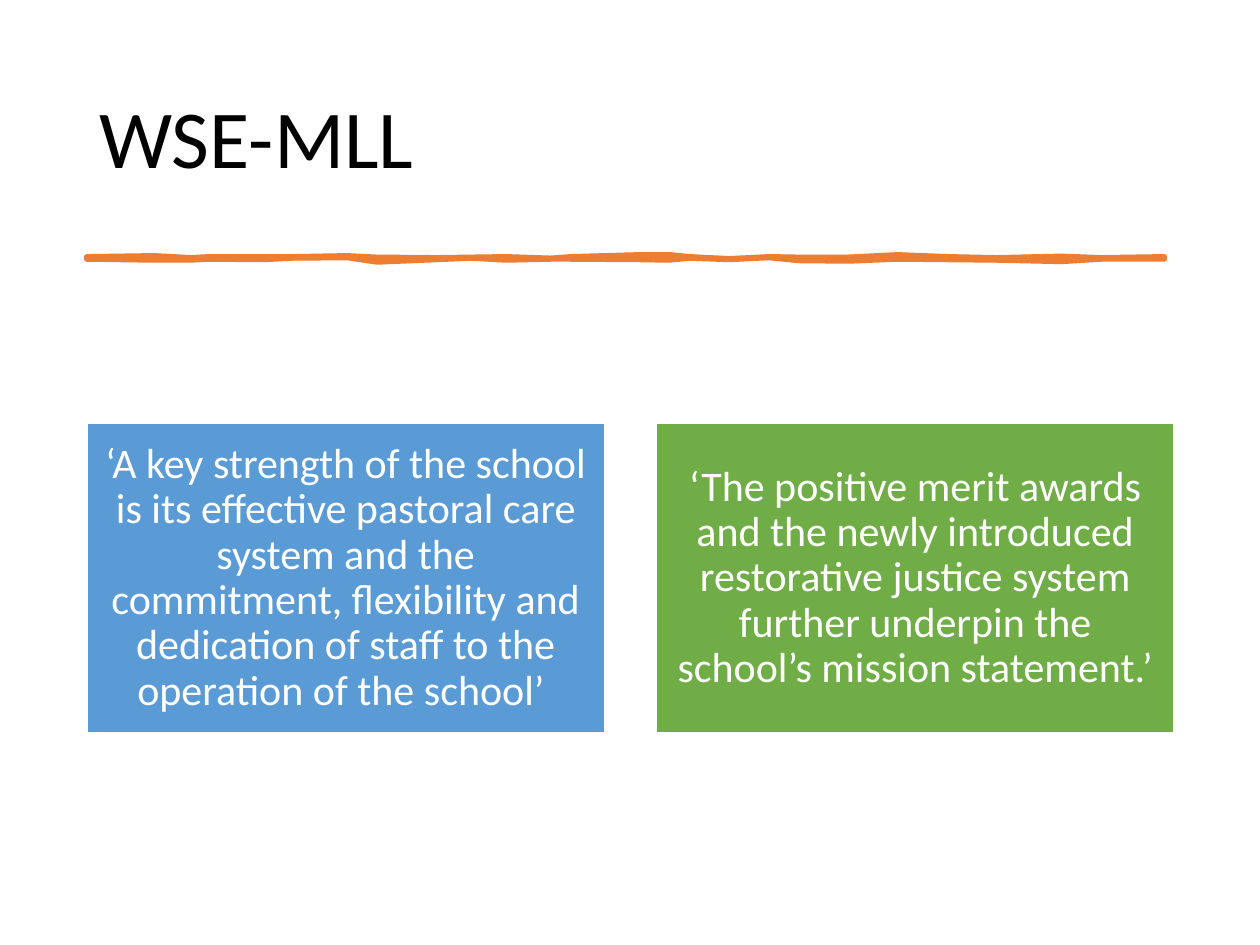
from lxml.etree import SubElement
from pptx import Presentation
from pptx.dml.color import RGBColor
from pptx.enum.shapes import MSO_SHAPE
from pptx.enum.text import MSO_ANCHOR, PP_ALIGN
from pptx.oxml.ns import qn
from pptx.util import Cm, Pt

FONT = "Calibri"
MARGIN = 1.75
CARD_WIDTH, CARD_HEIGHT = 10.44, 6.25
CARD_TOP, CARD_STEP = 8.53, 11.48

CARDS = [
    ("5B9BD5", "‘A key strength of the school is its effective pastoral care "
               "system and the commitment, flexibility and dedication of "
               "staff to the operation of the school’ "),
    ("70AD47", "‘The positive merit awards and the newly introduced "
               "restorative justice system further underpin the school’s "
               "mission statement.’"),
]

# Brush stroke stations: x, upper edge, lower edge
BRUSH = [
    (1.75, 5.18, 5.22), (3.1, 5.16, 5.24), (3.85, 5.2, 5.24),
    (4.2, 5.18, 5.22), (5.3, 5.18, 5.23), (5.9, 5.18, 5.2),
    (7.0, 5.16, 5.19), (7.6, 5.19, 5.28), (8.8, 5.2, 5.23),
    (9.5, 5.19, 5.2), (10.2, 5.18, 5.24), (11.1, 5.21, 5.22),
    (11.5, 5.18, 5.22), (12.9, 5.14, 5.23), (13.5, 5.14, 5.24),
    (13.9, 5.18, 5.2), (14.7, 5.22, 5.23), (15.5, 5.18, 5.19),
    (16.1, 5.19, 5.25), (17.1, 5.19, 5.26), (18.1, 5.14, 5.22),
    (19.1, 5.18, 5.23), (20.1, 5.2, 5.24), (21.4, 5.17, 5.27),
    (22.2, 5.2, 5.22), (23.47, 5.18, 5.22),
]


def color(value):
    return RGBColor.from_string(value)


def set_values(target, values):
    for name, value in values.items():
        setattr(target, name, value)


def paint(shape, fill, line, width):
    shape.shadow.inherit = False
    shape.fill.solid()
    shape.fill.fore_color.rgb = color(fill)
    shape.line.color.rgb = color(line)
    shape.line.width = Pt(width)


def write(shape, text, size, text_color, paragraph_format, margin=None):
    frame = shape.text_frame
    set_values(frame, {"word_wrap": True,
                       "vertical_anchor": MSO_ANCHOR.MIDDLE})
    if margin is not None:
        for side in ("left", "right", "top", "bottom"):
            setattr(frame, f"margin_{side}", Cm(margin))
    paragraph = frame.paragraphs[0]
    set_values(paragraph, {"line_spacing": 0.9, **paragraph_format})
    run = paragraph.add_run()
    run.text = text
    set_values(run.font, {"name": FONT, "size": Pt(size)})
    run.font.color.rgb = color(text_color)


def add_title(slide, text):
    box = slide.shapes.add_textbox(Cm(MARGIN), Cm(1.02), Cm(21.9), Cm(3.68))
    write(box, text, 47, "000000", {"alignment": PP_ALIGN.LEFT})


def add_brush_stroke(slide, stroke_color):
    upper = [(Cm(x), Cm(top)) for x, top, _ in BRUSH]
    lower = [(Cm(x), Cm(bottom)) for x, _, bottom in reversed(BRUSH)]
    builder = slide.shapes.build_freeform(*upper[0])
    builder.add_line_segments(upper[1:] + lower, close=True)
    stroke = builder.convert_to_shape()
    paint(stroke, stroke_color, stroke_color, 3.25)
    SubElement(stroke.line._get_or_add_ln(), qn("a:round"))


def add_card(slide, left, fill, text):
    card = slide.shapes.add_shape(MSO_SHAPE.RECTANGLE, Cm(left), Cm(CARD_TOP),
                                  Cm(CARD_WIDTH), Cm(CARD_HEIGHT))
    paint(card, fill, "FFFFFF", 1)
    write(card, text, 24, "FFFFFF", {"alignment": PP_ALIGN.CENTER}, 0.25)


def main():
    presentation = Presentation()
    set_values(presentation, {"slide_width": Cm(25.4),
                              "slide_height": Cm(19.05)})
    slide = presentation.slides.add_slide(presentation.slide_layouts[6])

    # Heading and divider
    add_title(slide, "WSE-MLL")
    add_brush_stroke(slide, "ED7D31")

    # Quotation cards
    for index, (fill, text) in enumerate(CARDS):
        add_card(slide, MARGIN + index * CARD_STEP, fill, text)

    presentation.save("out.pptx")


if __name__ == "__main__":
    main()
